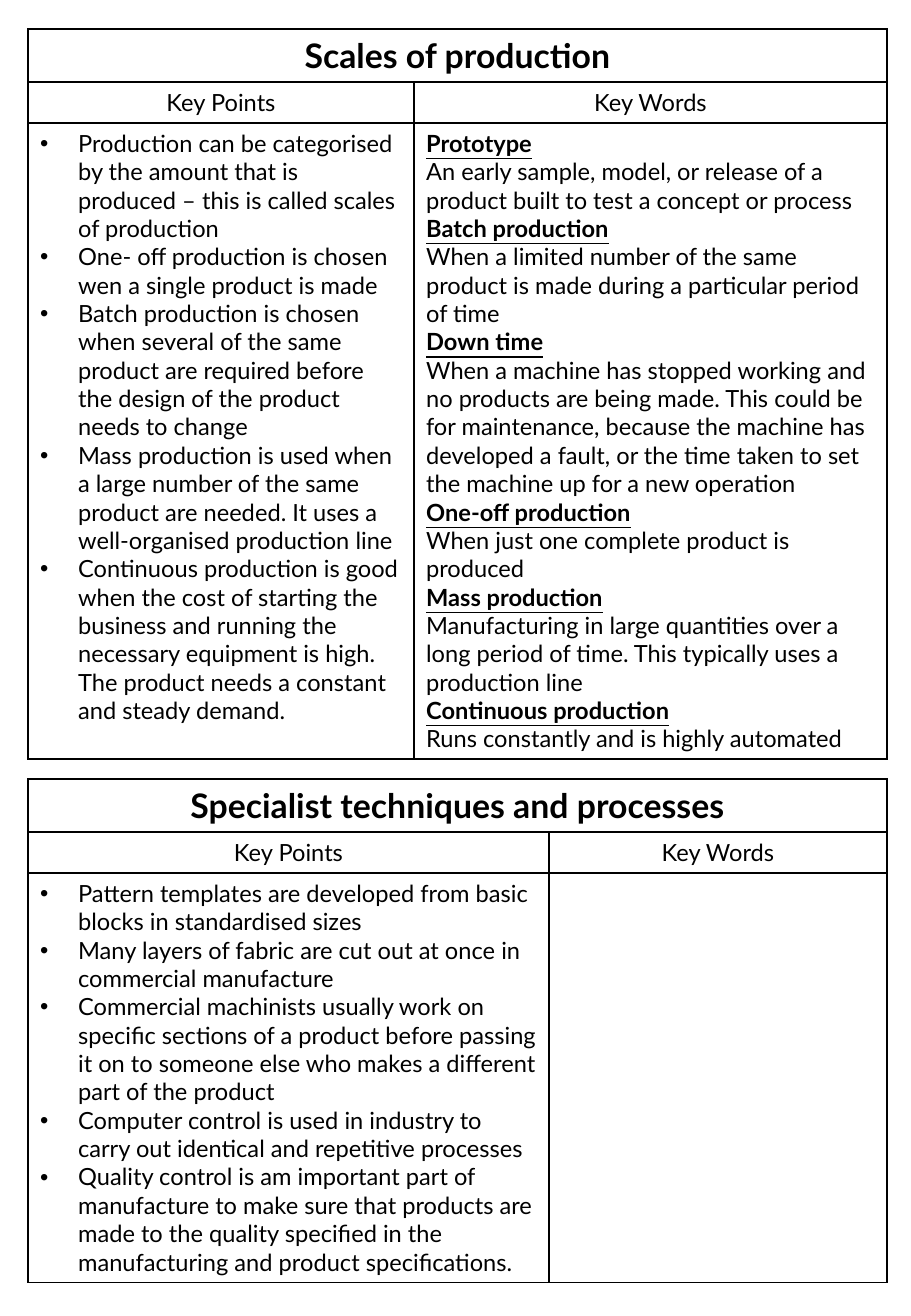
from lxml.etree import SubElement
from pptx import Presentation
from pptx.dml.color import RGBColor
from pptx.enum.text import PP_ALIGN
from pptx.oxml.ns import qn
from pptx.util import Pt

PX = 7526  # EMU in one px
LEFT = 28
HEADS = [53, 41]
INK = "000000"

SHEETS = [
    {
        "title": "Scales of production",
        "top": 29,
        "cols": [386, 473],
        "body": 636,
        "points": [
            "Production can be categorised by the amount that is produced – this is called scales of production",
            "One- off production is chosen wen a single product is made",
            "Batch production is chosen when several of the same product are required before the design of the product needs to change",
            "Mass production is used when a large number of the same product are needed. It uses a well-organised production line",
            "Continuous production is good when the cost of starting the business and running the necessary equipment is high. The product needs a constant and steady demand.",
        ],
        "words": {
            "Prototype": "An early sample, model, or release of a product built to test a concept or process",
            "Batch production": "When a limited number of the same product is made during a particular period of time",
            "Down time": "When a machine has stopped working and no products are being made. This could be for maintenance, because the machine has developed a fault, or the time taken to set the machine up for a new operation",
            "One-off production": "When just one complete product is produced",
            "Mass production": "Manufacturing in large quantities over a long period of time. This typically uses a production line",
            "Continuous production": "Runs constantly and is highly automated",
        },
    },
    {
        "title": "Specialist techniques and processes",
        "top": 779,
        "cols": [521, 338],
        "body": 409,
        "points": [
            "Pattern templates are developed from basic blocks in standardised sizes",
            "Many layers of fabric are cut out at once in commercial manufacture",
            "Commercial machinists usually work on specific sections of a product before passing it on to someone else who makes a different part of the product",
            "Computer control is used in industry to carry out identical and repetitive processes",
            "Quality control is am important part of manufacture to make sure that products are made to the quality specified in the manufacturing and product specifications.",
        ],
        "words": {},
    },
]


def write(cell, text, size=14, bold=False, line=False, mid=False, dot=False):
    """Add one paragraph to a cell, using the first one while it is empty."""
    frame = cell.text_frame
    para = frame.paragraphs[0] if not frame.text else frame.add_paragraph()
    para.alignment = PP_ALIGN.CENTER if mid else PP_ALIGN.LEFT
    run = para.add_run()
    run.text = text
    font = run.font
    font.name, font.size = "Lato", Pt(size)
    font.bold, font.underline = bold, line
    font.color.rgb = RGBColor.from_string(INK)
    if dot:
        props = para._p.get_or_add_pPr()
        props.set("marL", str(38 * PX))
        props.set("indent", str(-38 * PX))
        SubElement(props, qn("a:buFont"), typeface="Arial")
        SubElement(props, qn("a:buChar"), char="•")


def frame_cell(cell):
    """Give a cell thin black borders and no fill."""
    props = cell._tc.get_or_add_tcPr()
    for side in ("lnL", "lnR", "lnT", "lnB"):
        edge = SubElement(props, qn(f"a:{side}"), w=str(Pt(1)))
        fill = SubElement(edge, qn("a:solidFill"))
        SubElement(fill, qn("a:srgbClr"), val=INK)
    cell.fill.background()


deck = Presentation()
deck.slide_width, deck.slide_height = 911 * PX, 1316 * PX
slide = deck.slides.add_slide(deck.slide_layouts[6])

for sheet in SHEETS:
    cols, rows = sheet["cols"], HEADS + [sheet["body"]]
    box = [n * PX for n in (LEFT, sheet["top"], sum(cols), sum(rows))]
    table = slide.shapes.add_table(len(rows), len(cols), *box).table
    for col, width in zip(table.columns, cols):
        col.width = width * PX
    for row, height in zip(table.rows, rows):
        row.height = height * PX
    for cell in table.iter_cells():
        frame_cell(cell)

    table.cell(0, 0).merge(table.cell(0, 1))
    write(table.cell(0, 0), sheet["title"], size=20, bold=True, mid=True)
    for i, head in enumerate(["Key Points", "Key Words"]):
        write(table.cell(1, i), head, mid=True)
    for point in sheet["points"]:
        write(table.cell(2, 0), point, dot=True)
    for word, sense in sheet["words"].items():
        write(table.cell(2, 1), word, bold=True, line=True)
        write(table.cell(2, 1), sense)

deck.save("out.pptx")
